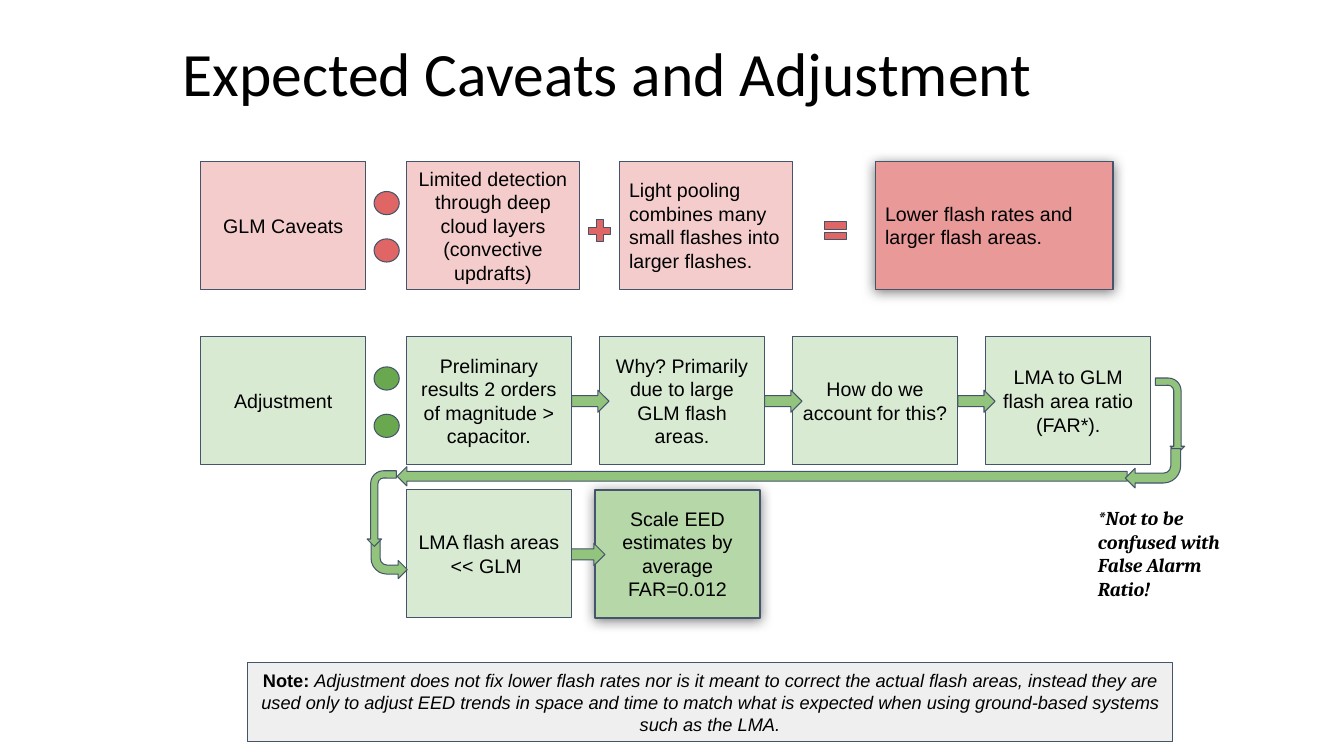
from lxml.etree import SubElement as Sub
from pptx import Presentation
from pptx.dml.color import RGBColor as RGB
from pptx.enum.shapes import MSO_SHAPE as Geo
from pptx.enum.text import MSO_ANCHOR as Anchor, PP_ALIGN as Align
from pptx.oxml.ns import qn
from pptx.util import Inches, Pt

HUES = {
    "ink": "000000", "edge": "44546A", "note": "EFEFEF",
    "pink": "F4CCCC", "rose": "EA9999", "red": "E06666",
    "pale": "D9EAD3", "mid": "B6D7A8", "leaf": "93C47D", "green": "6AA84F",
}
WIDE, HIGH = 1.64, 1.27      # usual box
LEFT, COL, STEP = 1.99, 4.03, 1.915
TOP, ROW, LAST = 1.6, 3.34, 4.86
BEND = (0.25, 0.25, 0.25, 0.438)


def hue(name):
    return RGB.from_string(HUES[name])


def place(left, top, width, height):
    return [Inches(n) for n in (left, top, width, height)]


def add_run(para, text, size=14, font="Arial", bold=False, slant=False):
    run = para.add_run()
    run.text = text
    run.font.name = font
    run.font.size = Pt(size)
    run.font.bold = bold
    run.font.italic = slant
    run.font.color.rgb = hue("ink")


def set_frame(frame, anchor, side=0.1, edge=0.1):
    frame.word_wrap = True
    frame.vertical_anchor = anchor
    frame.margin_left = frame.margin_right = Inches(side)
    frame.margin_top = frame.margin_bottom = Inches(edge)
    return frame.paragraphs[0]


def add_form(slide, geo, spot, fill, adjust=(), turn=0, flip=False, line=0.75):
    form = slide.shapes.add_shape(geo, *place(*spot))
    form.shadow.inherit = False
    form.fill.solid()
    form.fill.fore_color.rgb = hue(fill)
    form.line.color.rgb = hue("edge")
    form.line.width = Pt(line)
    for i, value in enumerate(adjust):
        form.adjustments[i] = value
    form.rotation = turn
    if flip:
        form.element.spPr.get_or_add_xfrm().set("flipH", "1")
    return form


def add_box(slide, spot, fill, text="", align=Align.CENTER, line=0.75):
    box = add_form(slide, Geo.RECTANGLE, spot, fill, line=line)
    para = set_frame(box.text_frame, Anchor.MIDDLE)
    para.alignment = align
    if text:
        add_run(para, text)
    return box


def add_glow(box):
    effects = box.element.spPr.find(qn("a:effectLst"))
    shade = Sub(effects, qn("a:outerShdw"), blurRad=str(Pt(9)),
                dist=str(Pt(1.5)), dir="5400000", algn="bl", rotWithShape="0")
    color = Sub(shade, qn("a:srgbClr"), val=HUES["ink"])
    Sub(color, qn("a:alpha"), val="50000")


def add_head(slide, top, text, fill, dot):
    """Row label followed by a colon made of two dots."""
    add_box(slide, (LEFT, top, WIDE, HIGH), fill, text)
    for drop in (0.3, 0.77):
        add_form(slide, Geo.OVAL, (3.71, top + drop, 0.25, 0.23), dot)


def add_arrow(slide, left, top):
    add_form(slide, Geo.RIGHT_ARROW, (left, top + 0.53, 0.37, 0.22), "leaf")


def add_text(slide, spot, text, anchor, edge, **style):
    area = slide.shapes.add_textbox(*place(*spot))
    para = set_frame(area.text_frame, anchor, edge=edge)
    add_run(para, text, **style)
    return para


def add_caveats(slide):
    add_head(slide, TOP, "GLM Caveats", "pink", "red")
    add_box(slide, (COL, TOP, 1.72, HIGH), "pink",
            "Limited detection through deep cloud layers (convective updrafts)")
    add_box(slide, (6.14, TOP, 1.72, HIGH), "pink",
            "Light pooling combines many small flashes into larger flashes.",
            Align.LEFT)
    add_glow(add_box(slide, (8.68, TOP, 2.36, HIGH), "rose",
                     "Lower flash rates and larger flash areas.", Align.LEFT))
    add_form(slide, Geo.MATH_PLUS, (5.8, 2.14, 0.3, 0.3), "red", (0.235,))
    add_form(slide, Geo.MATH_EQUAL, (8.14, 2.14, 0.3, 0.3), "red",
             (0.235, 0.118))


def add_steps(slide):
    add_head(slide, ROW, "Adjustment", "pale", "green")
    steps = (
        "Preliminary results 2 orders of magnitude > capacitor.",
        "Why? Primarily due to large GLM flash areas.",
        "How do we account for this?",
        "LMA to GLM flash area ratio (FAR*).",
    )
    for i, text in enumerate(steps):
        left = COL + i * STEP
        add_box(slide, (left, ROW, WIDE, HIGH), "pale", text)
        if i:
            add_arrow(slide, left + WIDE - STEP, ROW)

    # Second line of steps
    add_glow(add_box(slide, (5.9, LAST, WIDE, HIGH), "mid",
                     "Scale EED estimates by average FAR=0.012", line=1.5))
    add_arrow(slide, 5.63, LAST)
    add_box(slide, (COL, LAST, WIDE, HIGH), "pale", "LMA flash areas << GLM ")


def add_loop(slide):
    """Arrows that lead from the end of one line to the start of the next."""
    def bend(spot, turn, flip=False):
        add_form(slide, Geo.BENT_ARROW, spot, "leaf", BEND, turn, flip)

    bend((11.23, 3.98, 0.75, 0.29), 90)
    bend((3.68, 5.37, 0.36, 0.37), 180, True)
    bend((3.41, 4.9, 0.75, 0.29), 270, True)
    add_form(slide, Geo.LEFT_ARROW, (3.94, 4.63, 7.24, 0.19), "leaf")
    bend((11.16, 4.45, 0.55, 0.39), 180)


def add_notes(slide):
    box = add_box(slide, (2.45, 6.57, 9.18, 0.79), "note")
    para = box.text_frame.paragraphs[0]
    add_run(para, "Note: ", 13, bold=True)
    add_run(para, "Adjustment does not fix lower flash rates nor is it meant "
            "to correct the actual flash areas, instead they are used only to "
            "adjust EED trends in space and time to match what is expected "
            "when using ground-based systems such as the LMA.", 13, slant=True)
    add_text(slide, (10.79, 4.92, 1.59, 1.14),
             "*Not to be confused with False Alarm Ratio!", Anchor.TOP, 0.1,
             font="Cambria", bold=True, slant=True)


def main():
    deck = Presentation()
    deck.slide_width, deck.slide_height = Inches(13.33), Inches(7.5)
    slide = deck.slides.add_slide(deck.slide_layouts[6])
    title = add_text(slide, (1.71, 0.12, 11.19, 1.27),
                     "Expected Caveats and Adjustment", Anchor.MIDDLE, 0.05,
                     size=44, font="Calibri")
    title.line_spacing = 0.9
    add_caveats(slide)
    add_steps(slide)
    add_loop(slide)
    add_notes(slide)
    deck.save("out.pptx")


if __name__ == "__main__":
    main()
